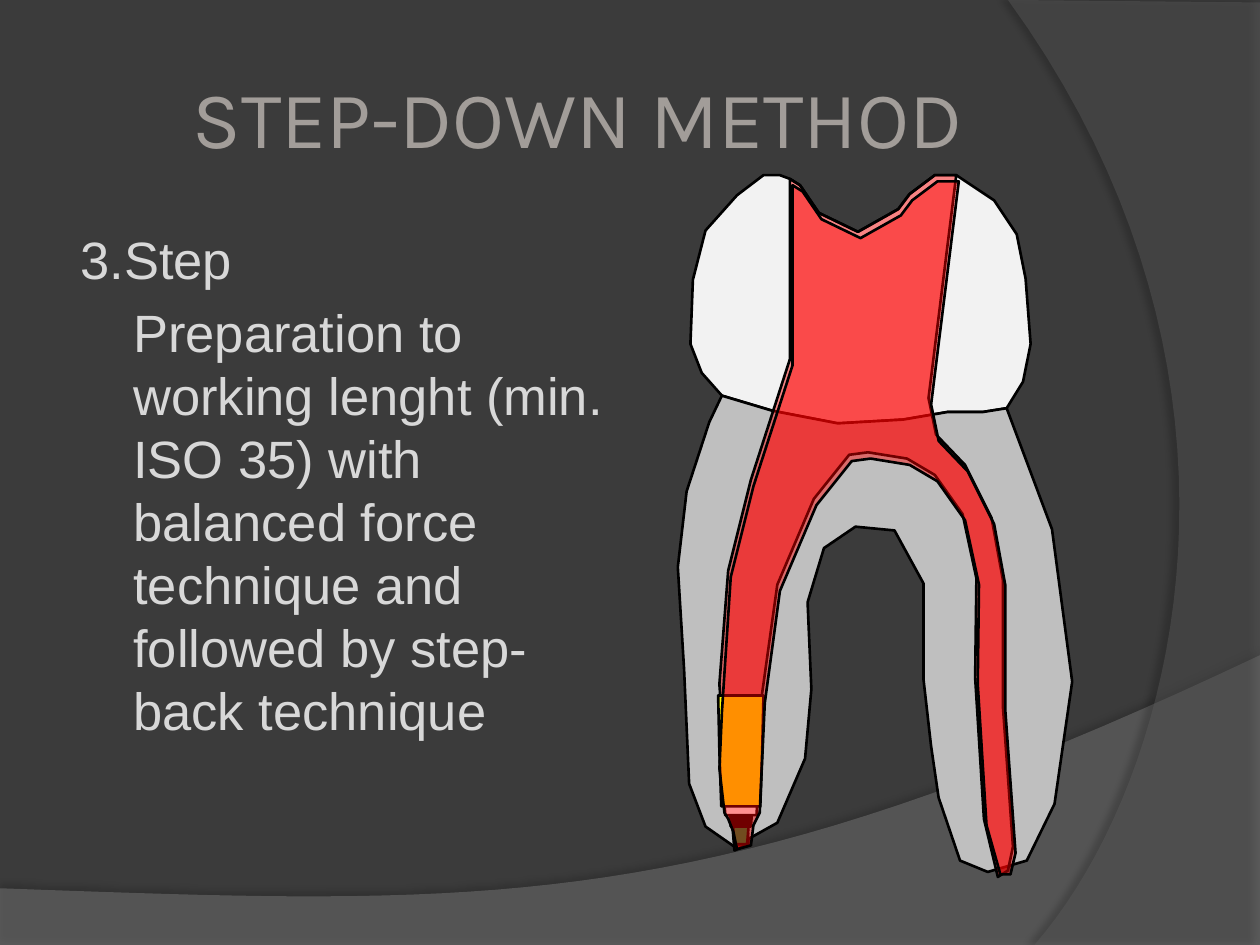
from lxml.etree import SubElement
from pptx import Presentation
from pptx.dml.color import RGBColor
from pptx.enum.text import MSO_ANCHOR, PP_ALIGN
from pptx.oxml.ns import qn
from pptx.util import Inches, Pt

BACK = RGBColor(0x3B, 0x3B, 0x3B)
WAVE = RGBColor(0x7F, 0x7F, 0x7F)
ARC = RGBColor(0x5E, 0x5E, 0x5E)
TITLE = RGBColor(0xA2, 0x9D, 0x99)
BODY = RGBColor(0xD8, 0xD8, 0xD8)
CROWN = RGBColor(0xF2, 0xF2, 0xF2)
ROOT = RGBColor(0xBF, 0xBF, 0xBF)
RED = RGBColor(0xFF, 0x00, 0x00)
GREEN = RGBColor(0x02, 0x88, 0x38)
BLACK = RGBColor(0x00, 0x00, 0x00)
WHITE = RGBColor(0xFF, 0xFF, 0xFF)
YELLOW = RGBColor(0xFF, 0xFF, 0x00)

FOSSA = [(6.27, 1.42), (6.35, 1.47), (6.5, 1.69), (6.81, 1.84),
         (7.13, 1.66), (7.22, 1.54), (7.42, 1.39), (7.59, 1.39)]
NECK = [(5.73, 3.14), (6.13, 3.26), (6.65, 3.36), (7.17, 3.33),
        (7.52, 3.27), (7.8, 3.27), (7.99, 3.24)]
CHEEKS = {
    "left": [(5.57, 2.96), (5.48, 2.73), (5.5, 2.22), (5.6, 1.83),
             (5.85, 1.55), (6.06, 1.39), (6.19, 1.39)],
    "right": [(7.89, 1.59), (8.07, 1.86), (8.14, 2.21), (8.18, 2.73),
              (8.12, 3.03)],
}
ROOTS = {
    "left": [(5.63, 3.35), (5.45, 3.9), (5.38, 4.5), (5.43, 5.31),
             (5.47, 6.22), (5.6, 6.56), (5.83, 6.72), (6.17, 6.53),
             (6.39, 6.02), (6.44, 5.47), (6.41, 4.78)],
    "fork": [(6.54, 4.35), (6.79, 4.18), (7.1, 4.21)],
    "right": [(7.33, 4.63), (7.33, 5.39), (7.39, 5.92), (7.45, 6.33),
              (7.62, 6.83), (7.84, 6.92), (8.15, 6.83), (8.37, 6.38),
              (8.51, 5.41), (8.35, 4.2)],
}
PULP = {
    "left": [(6.27, 2.85), (5.96, 3.81), (5.78, 4.53)],
    "fork": [(6.17, 4.64), (6.46, 3.96), (6.74, 3.61), (6.89, 3.59),
             (7.2, 3.64), (7.42, 3.77)],
    "right": [(7.64, 4.08), (7.75, 4.59), (7.74, 5.38), (7.81, 6.5),
              (7.92, 6.96), (8, 6.91), (8.04, 6.72), (7.96, 5.6),
              (7.96, 4.6), (7.87, 4.11), (7.66, 3.69), (7.43, 3.45),
              (7.37, 3.16)],
}
NARROW = [(5.71, 5.43), (5.72, 5.57), (5.8, 5.61), (5.76, 6.02),
          (5.81, 6.51), (5.83, 6.75), (5.94, 6.7), (5.92, 6.18),
          (5.96, 5.6), (6.04, 5.57)]
WIDE = [(5.73, 5.65), (5.71, 6.1), (5.75, 6.45)]
WIDE_TIP = [(5.78, 6.5), (5.82, 6.6), (5.85, 6.74), (5.96, 6.71),
            (5.98, 6.55), (6.03, 6.45), (6.07, 5.58), (6.17, 4.84)]
SHIFT = (0.02, 0.05)
APEX = 6.94

FILES = [
    (GREEN, 0.21, 0.1, 5.58, 6.7),
    (BLACK, 0.25, 0.16, 5.57, 6.56),
    (WHITE, 0.31, 0.25, 5.56, 6.47),
    (YELLOW, 0.36, 0.31, 5.52, 6.4),
]
AXIS = 5.88


def curve(a, b, c, d, steps=40):
    """Sample a cubic curve after its start point."""
    ts = [i / steps for i in range(1, steps + 1)]
    return [tuple((1 - t) ** 3 * p + 3 * t * (1 - t) ** 2 * q
                  + 3 * t * t * (1 - t) * r + t ** 3 * s
                  for p, q, r, s in zip(a, b, c, d)) for t in ts]


def lower(pts):
    """Shift points, but never below the apex."""
    right, down = SHIFT
    return [(x + right, min(y + down, APEX)) for x, y in pts]


def pulp(canal, move=list):
    """Join chamber, left canal and right canal into one outline."""
    return (move(PULP["left"]) + canal
            + move(PULP["fork"] + PULP["right"] + FOSSA[::-1]))


def taper(wide, thin, top, end):
    """Outline a file that keeps its width halfway, then narrows."""
    mid = (top + end) / 2
    rows = [(wide, top), (wide - 0.02, mid), (thin, end)]
    left = [(AXIS - w / 2, y) for w, y in rows]
    return left + [(AXIS + w / 2, y) for w, y in rows[::-1]]


class Deck:
    """Hold the style and the current slide."""

    def __init__(self):
        self.file = Presentation()
        self.file.slide_width = Inches(10)
        self.file.slide_height = Inches(7.5)
        self.slide = self.file.slides.add_slide(self.file.slide_layouts[6])
        fill = self.slide.background.fill
        fill.solid()
        fill.fore_color.rgb = BACK

    def form(self, pts, color, alpha=100, line=True):
        """Draw a closed outline."""
        pts = [(Inches(x), Inches(y)) for x, y in pts]
        pen = self.slide.shapes.build_freeform(*pts[0])
        pen.add_line_segments(pts[1:], close=True)
        shape = pen.convert_to_shape()
        shape.shadow.inherit = False
        shape.fill.solid()
        shape.fill.fore_color.rgb = color
        if alpha < 100:
            tint = shape.fill._xPr.find(qn("a:solidFill"))[0]
            SubElement(tint, qn("a:alpha"), val=str(alpha * 1000))
        if line:
            shape.line.color.rgb = BLACK
            shape.line.width = Pt(1.5)
        else:
            shape.line.fill.background()
        return shape

    def shade(self, shape, alpha, dist, angle):
        """Give a shape an outer shadow."""
        effects = shape._element.spPr.find(qn("a:effectLst"))
        outer = SubElement(effects, qn("a:outerShdw"), blurRad=str(Pt(4)),
                           dist=str(Pt(dist)), dir=str(angle * 60000),
                           algn="ctr", rotWithShape="0")
        tint = SubElement(outer, qn("a:srgbClr"), val="000000")
        SubElement(tint, qn("a:alpha"), val=str(alpha * 1000))

    def box(self, x, y, w, h, lines, font, size, color):
        """Add wrapped text and return its frame."""
        spot = [Inches(n) for n in (x, y, w, h)]
        frame = self.slide.shapes.add_textbox(*spot).text_frame
        frame.word_wrap = True
        frame.text = "\n".join(lines)
        for para in frame.paragraphs:
            para.font.name = font
            para.font.size = Pt(size)
            para.font.color.rgb = color
        return frame

    def tooth(self):
        """Draw crown, roots, canals and files from back to front."""
        crown = CHEEKS["left"] + FOSSA + CHEEKS["right"] + NECK[::-1]
        self.form(crown, CROWN)
        roots = ROOTS["left"] + ROOTS["fork"] + ROOTS["right"]
        self.form(roots + NECK[::-1], ROOT)
        self.form(pulp(NARROW), RED, 45)
        for color, *size in FILES:
            self.form(taper(*size), color)
        self.form(pulp(WIDE + WIDE_TIP, lower), RED, 44)


def main():
    """Build the slide and save it."""
    deck = Deck()
    wave = [(0, 7.05), (0, 7.51), (10, 7.51), (10, 5.2)]
    wave += curve(wave[-1], (5.59, 7.29), (3.91, 7.19), wave[0])
    deck.shade(deck.form(wave, WAVE, 45, False), 35, 3.5, 270)
    arc = [(10, 0.02), (10, 7.5), (8.21, 7.5)]
    arc += curve(arc[-1], (9.35, 6.19), (10.18, 3), (8, 0))
    deck.shade(deck.form(arc, ARC, 40, False), 45, 4, 180)

    head = deck.box(0.5, 0.3, 8.17, 1.25, ["STEP-DOWN METHOD"],
                    "Karla", 46, TITLE)
    head.vertical_anchor = MSO_ANCHOR.MIDDLE
    head.margin_left = head.margin_right = Inches(0.05)
    head.paragraphs[0].alignment = PP_ALIGN.CENTER

    body = deck.box(0.5, 1.75, 4.62, 4.95, [
        "3.Step",
        "Preparation to working lenght (min. ISO 35) with balanced force "
        "technique and followed by step-back technique"], "Arial", 30, BODY)
    for para, left in zip(body.paragraphs, (0.04, 0.46)):
        para.space_before = Pt(6)
        para.line_spacing = Pt(36)
        para._p.get_or_add_pPr().set("marL", str(Inches(left)))

    deck.tooth()
    deck.file.save("out.pptx")


if __name__ == "__main__":
    main()
